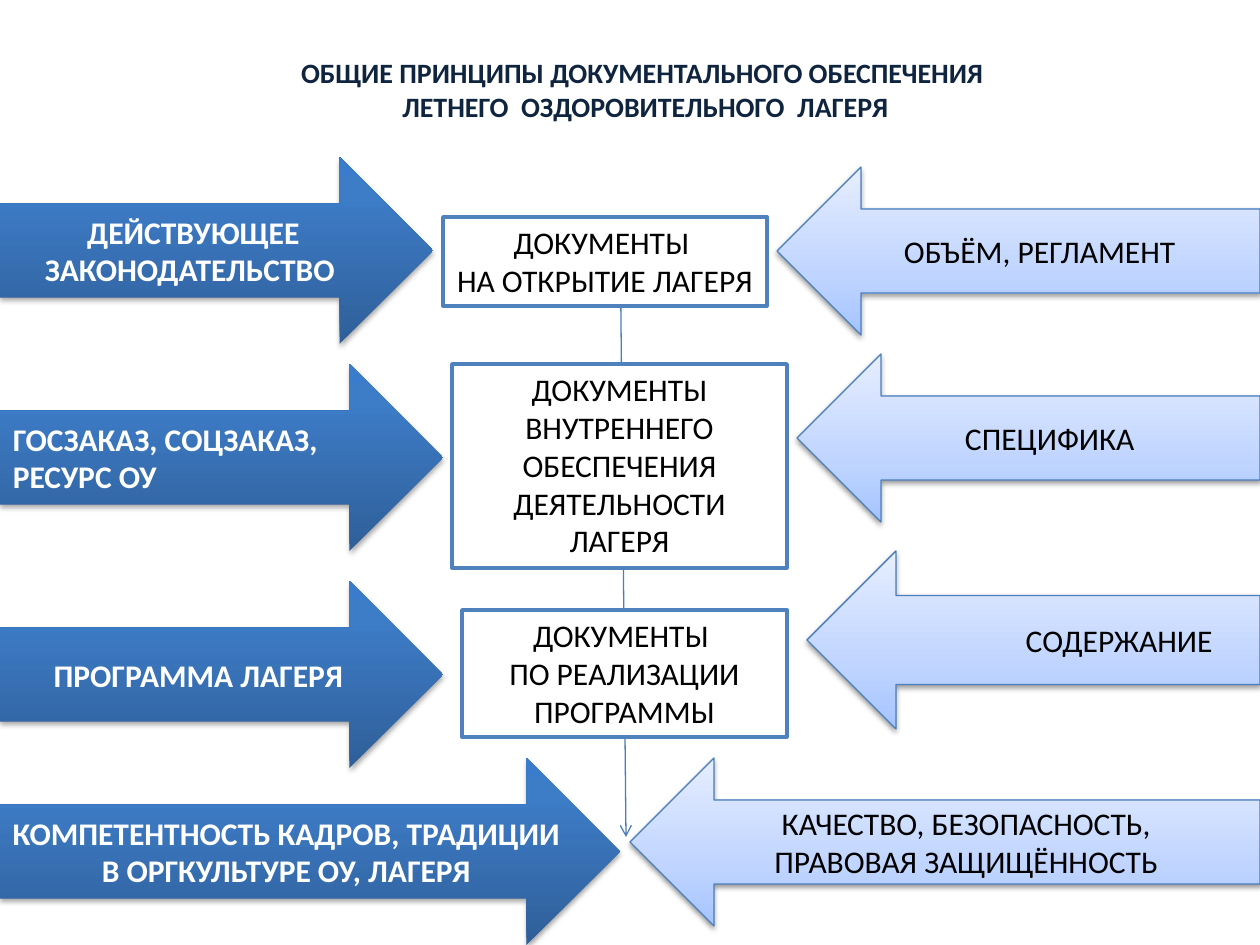
from lxml.etree import SubElement
from pptx import Presentation
from pptx.dml.color import RGBColor
from pptx.enum.shapes import MSO_CONNECTOR, MSO_SHAPE
from pptx.enum.text import MSO_ANCHOR, MSO_AUTO_SIZE, PP_ALIGN
from pptx.oxml import parse_xml
from pptx.oxml.ns import nsdecls, qn
from pptx.util import Emu, Pt

EMU_PER_INCH, PX_PER_INCH = 914400, 126
CENTER, LEFT = PP_ALIGN.CENTER, PP_ALIGN.LEFT
color = RGBColor.from_string


def px(*values):
    return [Emu(round(v * EMU_PER_INCH / PX_PER_INCH)) for v in values]


def write(frame, lines, size, ink, bold=False, align=CENTER):
    for i, line in enumerate(lines):
        paragraph = frame.paragraphs[0] if i == 0 else frame.add_paragraph()
        paragraph.alignment = align
        run = paragraph.add_run()
        run.text = line
        run.font.name = "Calibri"
        run.font.size = Pt(size)
        run.font.bold = bold
        run.font.color.rgb = color(ink)


prs = Presentation()
prs.slide_width, prs.slide_height = px(1260, 945)
slide = prs.slides.add_slide(prs.slide_layouts[5])

heading = slide.shapes.title
heading.left, heading.top, heading.width, heading.height = px(31, 49, 1229, 81)
heading.text_frame.auto_size = MSO_AUTO_SIZE.NONE
write(heading.text_frame,
      ["ОБЩИЕ ПРИНЦИПЫ ДОКУМЕНТАЛЬНОГО ОБЕСПЕЧЕНИЯ ",
       "ЛЕТНЕГО  ОЗДОРОВИТЕЛЬНОГО  ЛАГЕРЯ"], 16, "0F243E", bold=True)

flow = slide.shapes.add_connector(MSO_CONNECTOR.STRAIGHT, *px(620, 217, 626, 837))
flow.line.color.rgb = color("4B7EBC")
flow.line.width = Pt(0.75)
SubElement(flow.line._get_or_add_ln(), qn("a:tailEnd"), type="arrow")
SubElement(flow._element.spPr, qn("a:effectLst"))

foundation = dict(
    preset=MSO_SHAPE.RIGHT_ARROW, outline=None, ink="FFFFFF", bold=True,
    stops=[(0, "2F5F99"), (80, "3D7CC7"), (100, "3A7CCB")],
    shadow_alpha=35, shadow_distance=1.8)
requirement = dict(
    preset=MSO_SHAPE.LEFT_ARROW, outline="4B7EBC", ink="000000", bold=False,
    stops=[(0, "A4C4FF"), (35, "BFD4FF"), (100, "E6EEFF")],
    shadow_alpha=38, shadow_distance=1.6)

arrows = [
    (foundation, (0, 157, 433, 187), ["ДЕЙСТВУЮЩЕЕ ЗАКОНОДАТЕЛЬСТВО "], CENTER, 13),
    (foundation, (0, 581, 443, 187), ["ПРОГРАММА ЛАГЕРЯ"], CENTER, 13),
    (foundation, (0, 364, 443, 187), ["ГОСЗАКАЗ, СОЦЗАКАЗ,", "РЕСУРС ОУ"], LEFT, 13),
    (foundation, (0, 758, 620, 187),
     ["КОМПЕТЕНТНОСТЬ КАДРОВ, ТРАДИЦИИ В ОРГКУЛЬТУРЕ ОУ, ЛАГЕРЯ"], CENTER, 12),
    (requirement, (777, 167, 483, 168), ["ОБЪЁМ, РЕГЛАМЕНТ"], CENTER, 13),
    (requirement, (807, 551, 453, 178), ["СОДЕРЖАНИЕ"], CENTER, 139),
    (requirement, (797, 354, 463, 168), ["СПЕЦИФИКА"], CENTER, 13),
    (requirement, (630, 758, 630, 168),
     ["КАЧЕСТВО, БЕЗОПАСНОСТЬ,", "ПРАВОВАЯ ЗАЩИЩЁННОСТЬ"], CENTER, 13),
]
for look, place, lines, align, inset in arrows:
    arrow = slide.shapes.add_shape(look["preset"], *px(*place))
    arrow.fill.gradient()
    arrow.fill.gradient_angle = 90
    stop_list = arrow._element.spPr.find(qn("a:gradFill")).find(qn("a:gsLst"))
    for old_stop in list(stop_list):
        stop_list.remove(old_stop)
    for position, shade in look["stops"]:
        stop = SubElement(stop_list, qn("a:gs"), pos=str(position * 1000))
        SubElement(stop, qn("a:srgbClr"), val=shade)
    if look["outline"]:
        arrow.line.color.rgb = color(look["outline"])
        arrow.line.width = Pt(0.75)
    else:
        arrow.line.fill.background()
    arrow.shadow.inherit = False
    arrow._element.spPr.find(qn("a:effectLst")).append(parse_xml(
        f'<a:outerShdw {nsdecls("a")} blurRad="{Pt(3.1)}" '
        f'dist="{Pt(look["shadow_distance"])}" dir="5400000" rotWithShape="0">'
        f'<a:srgbClr val="000000"><a:alpha val="{look["shadow_alpha"] * 1000}"/>'
        '</a:srgbClr></a:outerShdw>'))
    frame = arrow.text_frame
    frame.word_wrap = True
    frame.vertical_anchor = MSO_ANCHOR.MIDDLE
    frame.margin_left = px(inset)[0]
    write(frame, lines, 18, look["ink"], look["bold"], align)

document_groups = [
    ((443, 217, 324, 89), False, ["ДОКУМЕНТЫ ", "НА ОТКРЫТИЕ ЛАГЕРЯ"]),
    ((452, 364, 335, 204), True,
     ["ДОКУМЕНТЫ ВНУТРЕННЕГО", "ОБЕСПЕЧЕНИЯ ДЕЯТЕЛЬНОСТИ ЛАГЕРЯ"]),
    ((462, 610, 325, 127), True, ["ДОКУМЕНТЫ ", "ПО РЕАЛИЗАЦИИ ПРОГРАММЫ"]),
]
for place, wraps, lines in document_groups:
    group = slide.shapes.add_shape(MSO_SHAPE.RECTANGLE, *px(*place))
    group.shadow.inherit = False
    group.fill.solid()
    group.fill.fore_color.rgb = color("FFFFFF")
    group.line.color.rgb = color("4F81BD")
    group.line.width = Pt(2)
    group.text_frame.word_wrap = wraps
    group.text_frame.vertical_anchor = MSO_ANCHOR.TOP
    write(group.text_frame, lines, 18, "000000")

prs.save("out.pptx")
